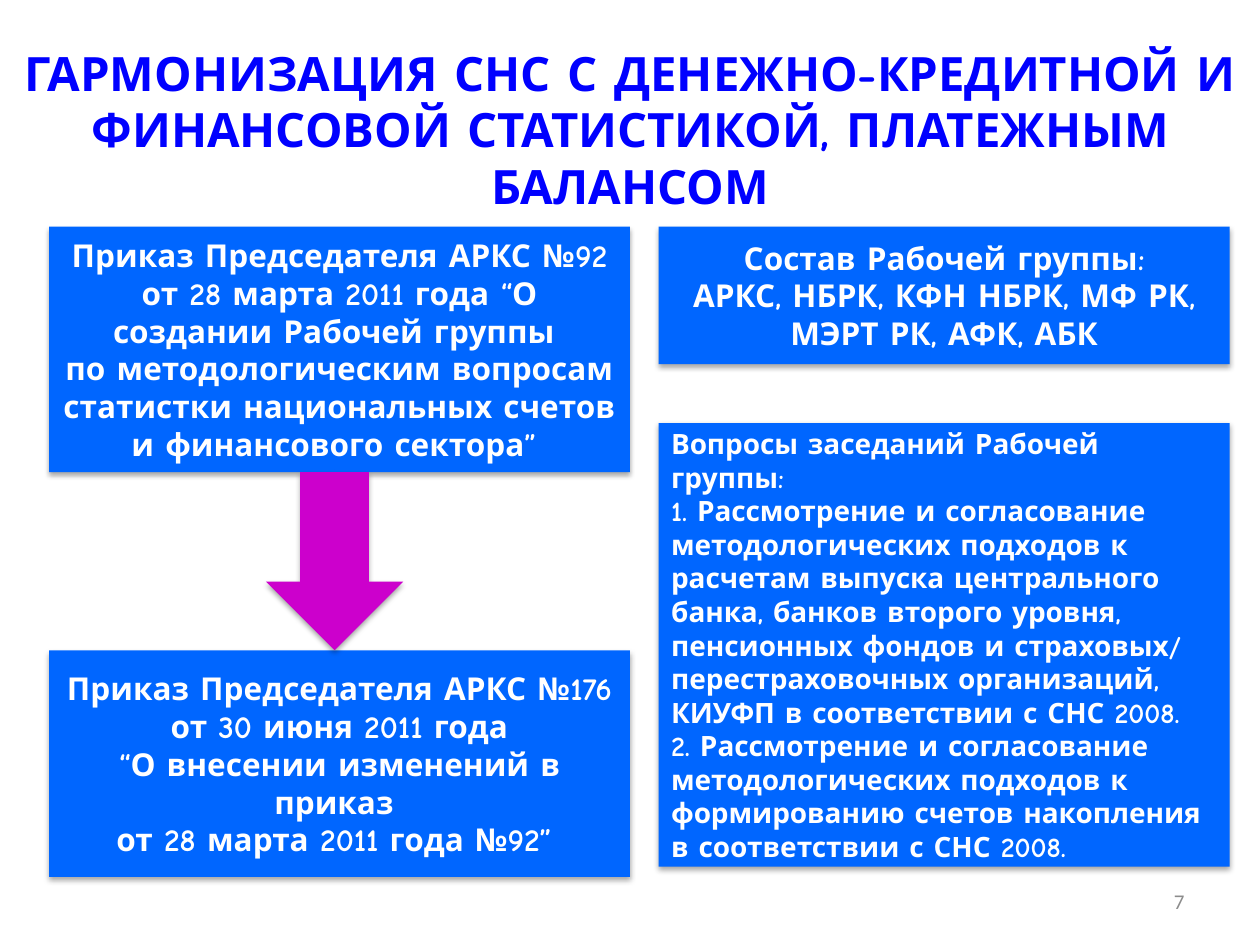
from lxml import etree
from pptx import Presentation
from pptx.dml.color import RGBColor
from pptx.enum.shapes import MSO_SHAPE as Preset
from pptx.enum.text import MSO_ANCHOR as Anchor, PP_ALIGN as Align
from pptx.oxml.ns import qn
from pptx.util import Cm, Pt

COLORS = {"title": "0000FF", "box": "0066FF", "arrow": "CC00CC",
          "text": "FFFFFF", "number": "8C8C8C", "shadow": "000000"}
FONT = "Comic Neue"

TITLE = ("ГАРМОНИЗАЦИЯ СНС С ДЕНЕЖНО-КРЕДИТНОЙ И ФИНАНСОВОЙ СТАТИСТИКОЙ, "
         "ПЛАТЕЖНЫМ БАЛАНСОМ")
ORDER_92 = [
    "Приказ Председателя АРКС №92 от 28 марта 2011 года “О создании Рабочей группы ",
    "по методологическим вопросам ",
    "статистки национальных счетов ",
    "и финансового сектора” ",
]
ORDER_176 = [
    "Приказ Председателя АРКС №176 от 30 июня 2011 года",
    "“О внесении изменений в приказ ",
    "от 28 марта 2011 года №92” ",
]
MEMBERS = [
    "Состав Рабочей группы:",
    "АРКС, НБРК, КФН НБРК, МФ РК,",
    "МЭРТ РК, АФК, АБК",
]
QUESTIONS = [
    "Вопросы заседаний Рабочей группы:",
    "1. Рассмотрение и согласование методологических подходов к расчетам выпуска "
    "центрального банка, банков второго уровня, пенсионных фондов и страховых/ "
    "перестраховочных организаций, КИУФП в соответствии с СНС 2008.",
    "2. Рассмотрение и согласование методологических подходов к формированию "
    "счетов накопления в соответствии с СНС 2008.",
]

# Column left and width, in cm
LEFT_COLUMN = (0.99, 11.71)
RIGHT_COLUMN = (13.28, 11.51)
ROW_TOP = 4.57
ORDER_92_HEIGHT = 4.95
ORDER_176_TOP = 13.11

# Text, column, top, height, size, alignment
BOXES = [
    (ORDER_92, LEFT_COLUMN, ROW_TOP, ORDER_92_HEIGHT, 18, Align.CENTER),
    (ORDER_176, LEFT_COLUMN, ORDER_176_TOP, 4.57, 18, Align.CENTER),
    (MEMBERS, RIGHT_COLUMN, ROW_TOP, 2.77, 18, Align.CENTER),
    (QUESTIONS, RIGHT_COLUMN, 8.53, 8.94, 16, Align.LEFT),
]


def write(shape, lines, size, color, align, anchor, font=FONT, bold=True):
    frame = shape.text_frame
    frame.word_wrap = True
    frame.vertical_anchor = anchor
    frame.text = "\n".join(lines)
    for paragraph in frame.paragraphs:
        paragraph.alignment = align
        for run in paragraph.runs:
            run.font.name = font
            run.font.size = Pt(size)
            run.font.bold = bold
            run.font.color.rgb = RGBColor.from_string(COLORS[color])


def add_filled(slide, preset, left, top, width, height, color):
    shape = slide.shapes.add_shape(preset, Cm(left), Cm(top), Cm(width), Cm(height))
    shape.fill.solid()
    shape.fill.fore_color.rgb = RGBColor.from_string(COLORS[color])
    shape.line.fill.background()
    # Soft shadow straight below
    shape.shadow.inherit = False
    effects = shape.element.spPr.find(qn("a:effectLst"))
    shadow = etree.SubElement(effects, qn("a:outerShdw"), blurRad=str(Pt(3.1)),
                              dist=str(Pt(1.8)), dir="5400000", rotWithShape="0")
    tone = etree.SubElement(shadow, qn("a:srgbClr"), val=COLORS["shadow"])
    etree.SubElement(tone, qn("a:alpha"), val="35000")
    return shape


def add_text(slide, left, top, width, height):
    return slide.shapes.add_textbox(Cm(left), Cm(top), Cm(width), Cm(height))


presentation = Presentation()
presentation.slide_width, presentation.slide_height = Cm(25.4), Cm(19.05)
slide = presentation.slides.add_slide(presentation.slide_layouts[6])

# Text boxes with orders, members and questions
for lines, (left, width), top, height, size, align in BOXES:
    box = add_filled(slide, Preset.RECTANGLE, left, top, width, height, "box")
    write(box, lines, size, "text", align, Anchor.MIDDLE)

# Arrow filling the gap between the two orders
arrow_top = ROW_TOP + ORDER_92_HEIGHT
add_filled(slide, Preset.DOWN_ARROW, 5.36, arrow_top, 2.77,
           ORDER_176_TOP - arrow_top, "arrow")

# Title and slide number
write(add_text(slide, 0, 0.76, 25.4, 3.18), [TITLE], 27, "title",
      Align.CENTER, Anchor.TOP)
write(add_text(slide, 18.2, 17.66, 5.93, 1.01), ["7"], 12, "number",
      Align.RIGHT, Anchor.MIDDLE, font="Calibri", bold=False)

presentation.save("out.pptx")
